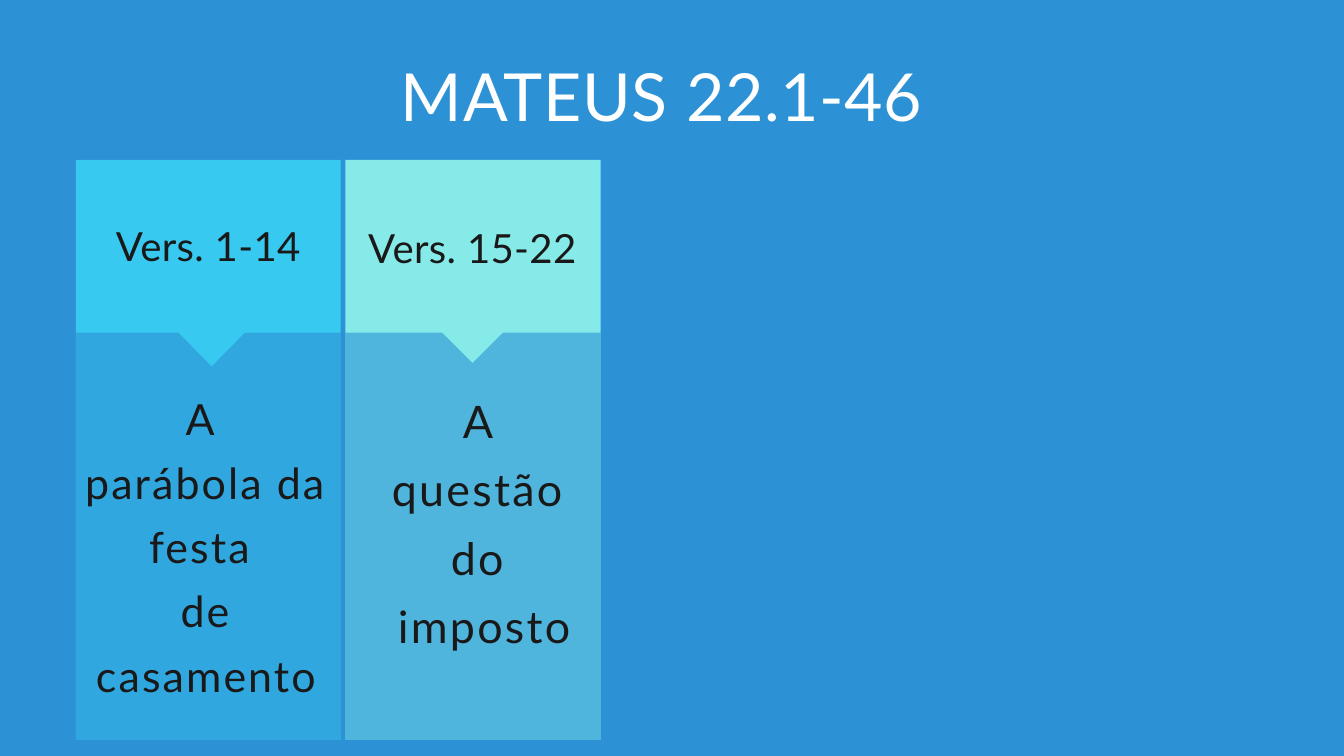
from dataclasses import dataclass

from lxml import etree
from pptx import Presentation
from pptx.dml.color import RGBColor
from pptx.enum.shapes import MSO_SHAPE
from pptx.enum.text import MSO_ANCHOR, MSO_AUTO_SIZE, PP_ALIGN
from pptx.oxml.ns import qn
from pptx.util import Inches, Pt

RECTANGLE = MSO_SHAPE.RECTANGLE
CENTER = PP_ALIGN.CENTER
TOP = MSO_ANCHOR.TOP
NO_AUTOFIT = MSO_AUTO_SIZE.NONE
TITLE_ONLY = 5


@dataclass(frozen=True)
class Theme:
    font: str = "Lato"
    background: str = "2C92D5"
    cyan: str = "37C9EF"
    mint: str = "86EAE9"
    ink: str = "191919"
    white: str = "FFFFFF"
    title_size: float = 71
    verses_size: float = 43
    parable_size: float = 46
    tax_size: float = 48
    veil_opacity: int = 60


THEME = Theme()

COLUMNS = [
    dict(
        box=(1.13, 2.38, 3.94, 8.63),
        color=THEME.cyan,
        verses="Vers. 1-14",
        verses_box=(0.14, 0.85, 3.66, 0.79),
        topic=["A ", "parábola da festa ", "de casamento"],
        topic_box=(-0.01, 3.27, 3.89, 4.84),
        topic_format=dict(size=THEME.parable_size, leading=68.8, spacing=2.3),
        pointer=[(2.71, 2.37), (2.02, 3.07), (1.37, 2.41)],
    ),
    dict(
        box=(5.14, 2.38, 3.8, 8.63),
        color=THEME.mint,
        verses="Vers. 15-22",
        verses_box=(0.07, 0.88, 3.64, 0.79),
        topic=["A ", "questão ", "do ", "imposto"],
        topic_box=(0.07, 3.26, 3.99, 4.1),
        topic_format=dict(size=THEME.tax_size, leading=73.3, spacing=2.5),
        pointer=[(2.69, 2.22), (1.89, 3.02), (1.28, 2.41)],
    ),
]
HEADER_HEIGHT = 2.57


def write_text(holder, lines, *, size, leading, spacing, color=THEME.ink):
    frame = holder.text_frame
    frame.word_wrap = True
    frame.auto_size = NO_AUTOFIT
    frame.vertical_anchor = TOP
    frame.margin_left = frame.margin_right = 0
    frame.margin_top = frame.margin_bottom = 0
    for index, line in enumerate(lines):
        paragraph = frame.add_paragraph() if index else frame.paragraphs[0]
        paragraph.alignment = CENTER
        paragraph.line_spacing = Pt(leading)
        run = paragraph.add_run()
        run.text = line
        run.font.name = THEME.font
        run.font.size = Pt(size)
        run.font.color.rgb = RGBColor.from_string(color)
        run.font._element.set("spc", str(round(spacing * 100)))


def paint(shape, color, opacity=100):
    shape.shadow.inherit = False
    shape.fill.solid()
    shape.fill.fore_color.rgb = RGBColor.from_string(color)
    shape.line.fill.background()
    if opacity < 100:
        swatch = shape._element.spPr.find(qn("a:solidFill"))[0]
        etree.SubElement(swatch, qn("a:alpha")).set("val", str(opacity * 1000))


def add_title(slide, box, title):
    heading = slide.shapes.title
    heading.left, heading.top, heading.width, heading.height = map(Inches, box)
    write_text(heading, [title], size=THEME.title_size, leading=94.3,
               spacing=0.7, color=THEME.white)


def add_column(slide, box, color, verses, verses_box, topic, topic_box,
               topic_format, pointer):
    left, top, width, height = box
    shapes = slide.shapes

    def place(x, y, *extent):
        return [Inches(v) for v in (left + x, top + y, *extent)]

    panel = shapes.add_shape(RECTANGLE, *place(0, 0, width, height))
    paint(panel, color)
    veil = shapes.add_shape(
        RECTANGLE, *place(0, HEADER_HEIGHT, width, height - HEADER_HEIGHT))
    paint(veil, THEME.background, THEME.veil_opacity)

    corners = [place(x, y) for x, y in pointer]
    outline = shapes.build_freeform(*corners[0])
    outline.add_line_segments(corners[1:], close=True)
    paint(outline.convert_to_shape(), color)

    write_text(shapes.add_textbox(*place(*verses_box)), [verses],
               size=THEME.verses_size, leading=56, spacing=0.4)
    write_text(shapes.add_textbox(*place(*topic_box)), topic, **topic_format)


def main():
    deck = Presentation()
    deck.slide_width, deck.slide_height = Inches(20), Inches(11.25)
    slide = deck.slides.add_slide(deck.slide_layouts[TITLE_ONLY])
    slide.background.fill.solid()
    slide.background.fill.fore_color.rgb = RGBColor.from_string(THEME.background)
    add_title(slide, (4.93, 0.7, 9.84, 1.32), "MATEUS 22.1-46")
    for column in COLUMNS:
        add_column(slide, **column)
    deck.save("out.pptx")


if __name__ == "__main__":
    main()
